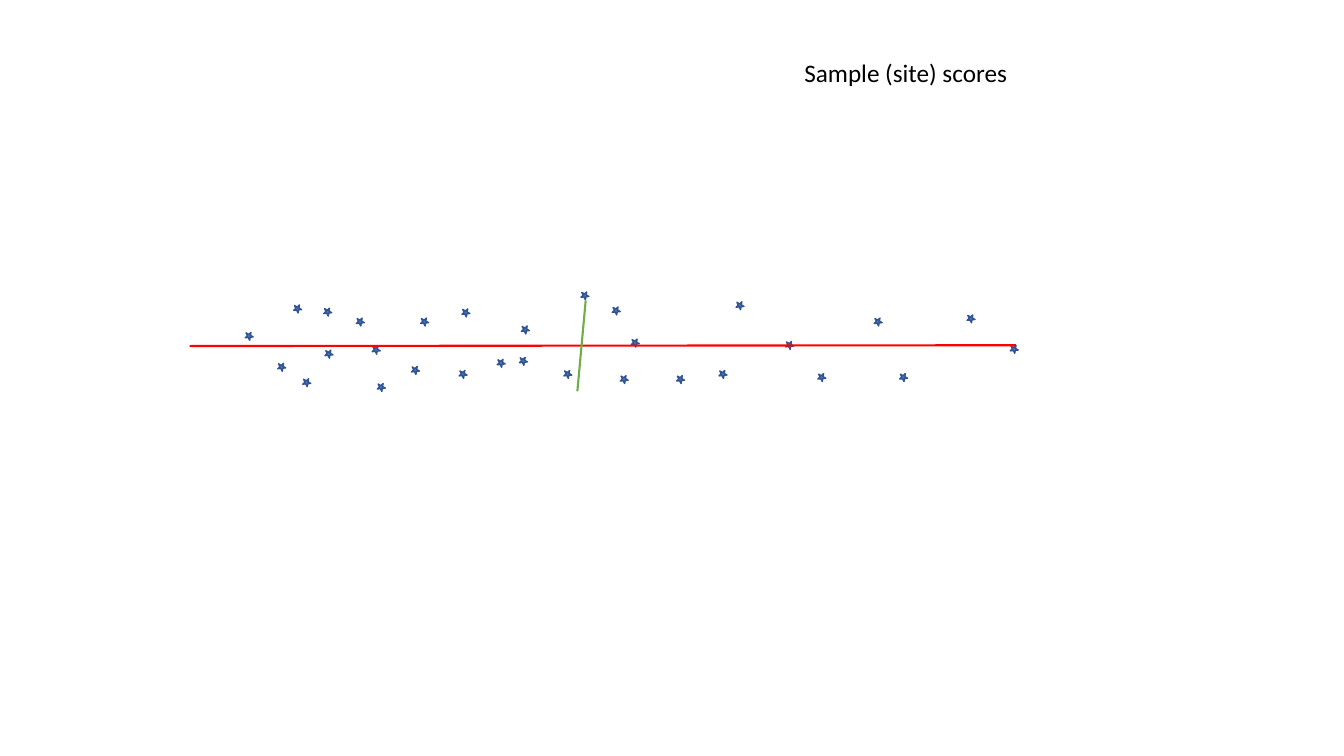
"""Build a slide with an ordination of sample scores along two axes."""
from typing import NamedTuple

from lxml.etree import SubElement
from pptx import Presentation
from pptx.dml.color import RGBColor
from pptx.enum.shapes import MSO_CONNECTOR, MSO_SHAPE
from pptx.enum.text import MSO_AUTO_SIZE
from pptx.oxml.ns import qn
from pptx.shapes.shapetree import GroupShapes
from pptx.slide import Slide
from pptx.util import Cm, Pt


class Sample(NamedTuple):
    left: float
    top: float


class Axis(NamedTuple):
    x1: float
    y1: float
    x2: float
    y2: float
    color: str


STAR_SIZE = 0.2
STAR_ROTATION = 316.7

SAMPLES = [
    Sample(6.17, 8.36), Sample(6.99, 9.14), Sample(7.39, 7.67),
    Sample(8.15, 7.75), Sample(8.18, 8.81), Sample(9.37, 8.71),
    Sample(9.5, 9.65), Sample(10.59, 8), Sample(11.56, 9.32),
    Sample(13.13, 8.2), Sample(14.63, 7.34), Sample(15.62, 9.45),
    Sample(18.11, 9.32), Sample(18.54, 7.59), Sample(19.79, 8.59),
    Sample(20.6, 9.4), Sample(22.02, 8), Sample(22.66, 9.4),
    Sample(24.36, 7.92), Sample(25.45, 8.69), Sample(7.62, 9.53),
    Sample(8.97, 8), Sample(17.04, 9.45), Sample(10.36, 9.22),
    Sample(11.63, 7.77), Sample(12.52, 9.04), Sample(13.08, 8.99),
    Sample(14.2, 9.32), Sample(15.42, 7.72), Sample(15.9, 8.53),
]

AXES = [
    Axis(4.78, 8.72, 25.6, 8.7, "FF0000"),
    Axis(14.55, 9.86, 14.76, 7.57, "70AD47"),
]


def rgb(color: str) -> RGBColor:
    return RGBColor.from_string(color)


def draw_sample(shapes: GroupShapes, sample: Sample) -> None:
    star = shapes.add_shape(
        MSO_SHAPE.STAR_5_POINT, Cm(sample.left), Cm(sample.top),
        Cm(STAR_SIZE), Cm(STAR_SIZE))
    star.rotation = STAR_ROTATION
    star.shadow.inherit = False
    star.fill.solid()
    star.fill.fore_color.rgb = rgb("4472C4")
    star.line.color.rgb = rgb("325491")
    star.line.width = Pt(1)


def draw_axis(shapes: GroupShapes, axis: Axis) -> None:
    line = shapes.add_connector(
        MSO_CONNECTOR.STRAIGHT, Cm(axis.x1), Cm(axis.y1),
        Cm(axis.x2), Cm(axis.y2))
    line.line.color.rgb = rgb(axis.color)
    line.line.width = Pt(1.5)
    SubElement(line._element.spPr, qn("a:effectLst"))


def add_text(slide: Slide, text: str, *, left: float, top: float,
             width: float, height: float, size: float = 18,
             font: str = "Calibri", color: str = "000000") -> None:
    box = slide.shapes.add_textbox(Cm(left), Cm(top), Cm(width), Cm(height))
    frame = box.text_frame
    frame.word_wrap = True
    frame.auto_size = MSO_AUTO_SIZE.SHAPE_TO_FIT_TEXT
    run = frame.paragraphs[0].add_run()
    run.text = text
    run.font.size = Pt(size)
    run.font.name = font
    run.font.color.rgb = rgb(color)


def main() -> None:
    deck = Presentation()
    deck.slide_width, deck.slide_height = Cm(33.87), Cm(19.05)
    slide = deck.slides.add_slide(deck.slide_layouts[6])
    ordination = slide.shapes.add_group_shape().shapes
    for sample in SAMPLES:
        draw_sample(ordination, sample)
    for axis in AXES:
        draw_axis(ordination, axis)
    add_text(slide, "Sample (site) scores",
             left=20.02, top=1.32, width=5.66, height=1.02)
    deck.save("out.pptx")


if __name__ == "__main__":
    main()
